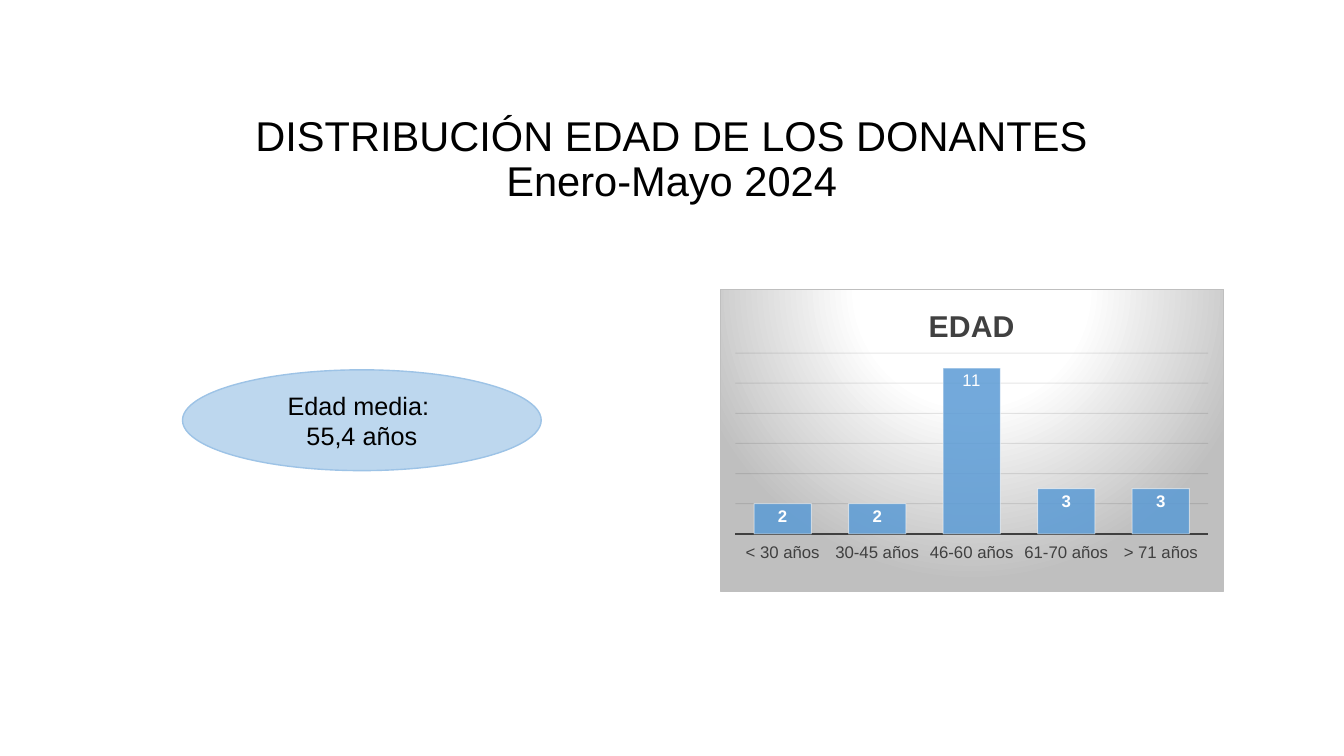
from dataclasses import dataclass

from lxml import etree
from pptx import Presentation
from pptx.chart.data import CategoryChartData
from pptx.dml.color import RGBColor
from pptx.enum.chart import XL_CHART_TYPE, XL_LABEL_POSITION, XL_TICK_LABEL_POSITION, XL_TICK_MARK
from pptx.enum.shapes import MSO_SHAPE
from pptx.enum.text import MSO_ANCHOR, PP_ALIGN
from pptx.oxml import parse_xml
from pptx.oxml.ns import nsdecls, qn
from pptx.util import Cm, Pt

COLUMNS = XL_CHART_TYPE.COLUMN_CLUSTERED
INSIDE_END = XL_LABEL_POSITION.INSIDE_END
LABELS_LOW = XL_TICK_LABEL_POSITION.LOW
NO_TICKS = XL_TICK_MARK.NONE
ELLIPSE = MSO_SHAPE.OVAL
TOP, MIDDLE = MSO_ANCHOR.TOP, MSO_ANCHOR.MIDDLE
CENTER = PP_ALIGN.CENTER


@dataclass(frozen=True)
class Theme:
    font: str = "Arial"
    ink: str = "000000"
    white: str = "FFFFFF"
    chart_ink: str = "404040"
    grid: str = "0D0D0D"
    bar: str = "5B9BD5"
    panel_edge: str = "BFBFBF"
    bubble: str = "BDD7EE"
    bubble_edge: str = "9DC3E6"
    title_size: float = 29.7
    bubble_size: float = 18
    chart_title_size: float = 21.6
    chart_size: float = 12


THEME = Theme()
AGE_COUNTS = {"< 30 años": 2, "30-45 años": 2, "46-60 años": 11, "61-70 años": 3, "> 71 años": 3}
HIGHLIGHTED_GROUP = 2


def rgb(color):
    return RGBColor.from_string(color)


def set_font(font, size, color, bold=False):
    font.name = THEME.font
    font.size = Pt(size)
    font.bold = bold
    font.color.rgb = rgb(color)


def set_line(line, color, width):
    line.color.rgb = rgb(color)
    line.width = Pt(width)


def set_alpha(element, *percents):
    """Give the colours inside element, in order, these opacities."""
    for color, percent in zip(element.iter(qn("a:srgbClr")), percents):
        etree.SubElement(color, qn("a:alpha")).set("val", str(percent * 1000))


def write_text(frame, paragraphs, *, size, color=THEME.ink, bold=False, anchor=None, spacing=None):
    """Fill a frame with centred paragraphs; a vertical tab breaks a line."""
    frame.word_wrap = True
    if anchor is not None:
        frame.vertical_anchor = anchor
    for index, text in enumerate(paragraphs):
        paragraph = frame.add_paragraph() if index else frame.paragraphs[0]
        paragraph.text = text
        paragraph.alignment = CENTER
        paragraph.line_spacing = spacing
        for run in paragraph.runs:
            set_font(run.font, size, color, bold)


def add_heading(slide, left, top, width, height):
    heading = slide.shapes.add_textbox(left, top, width, height)
    heading.text_frame.margin_top = Cm(0.23)
    write_text(heading.text_frame, ["DISTRIBUCIÓN EDAD DE LOS DONANTES\vEnero-Mayo 2024"],
               size=THEME.title_size, anchor=TOP, spacing=0.9)


def add_mean_age(slide, left, top, width, height):
    bubble = slide.shapes.add_shape(ELLIPSE, left, top, width, height)
    bubble.shadow.inherit = False
    bubble.fill.solid()
    bubble.fill.fore_color.rgb = rgb(THEME.bubble)
    set_line(bubble.line, THEME.bubble_edge, 1)
    write_text(bubble.text_frame, ["Edad media: ", "55,4 años"], size=THEME.bubble_size, anchor=MIDDLE)


def style_chart_panel(chart):
    """Add the radial background, its border and the fixed plot area."""
    stops = "".join(f'<a:gs pos="{place * 1000}"><a:srgbClr val="{color}"/></a:gs>'
                    for place, color in ((0, THEME.white), (39, THEME.white), (100, THEME.panel_edge)))
    panel = parse_xml(
        f'<c:spPr {nsdecls("c", "a")}><a:gradFill><a:gsLst>{stops}</a:gsLst><a:path path="circle">'
        '<a:fillToRect l="50000" t="-80000" r="50000" b="180000"/></a:path></a:gradFill>'
        f'<a:ln w="{Pt(0.75)}"><a:solidFill><a:srgbClr val="{THEME.panel_edge}"/></a:solidFill></a:ln></c:spPr>')
    chart_space = chart.element
    chart_space.find(qn("c:chart")).addnext(panel)

    plot_area = chart_space.find(".//" + qn("c:plotArea"))
    for layout in plot_area.findall(qn("c:layout")):
        plot_area.remove(layout)
    places = "".join(f'<c:{name} val="{value}"/>' for name, value in (
        ("layoutTarget", "inner"), ("xMode", "edge"), ("yMode", "edge"),
        ("x", 0.03), ("y", 0.21), ("w", 0.94), ("h", 0.6)))
    plot_area.insert(0, parse_xml(
        f'<c:layout {nsdecls("c")}><c:manualLayout>{places}</c:manualLayout></c:layout>'))


def style_axes(chart):
    ages = chart.category_axis
    ages.major_tick_mark = ages.minor_tick_mark = NO_TICKS
    ages.tick_label_position = LABELS_LOW
    set_font(ages.tick_labels.font, THEME.chart_size, THEME.chart_ink)
    set_line(ages.format.line, THEME.chart_ink, 1.5)

    donors = chart.value_axis
    donors.minimum_scale, donors.maximum_scale, donors.major_unit = 0, 12, 2
    donors.visible = False
    donors.has_major_gridlines = True
    set_line(donors.major_gridlines.format.line, THEME.grid, 0.75)
    set_alpha(chart.element.find(".//" + qn("c:majorGridlines")), 10)


def style_bars(plot):
    plot.gap_width = 65
    plot.vary_by_categories = False
    bars = plot.series[0]
    bars.format.fill.solid()
    bars.format.fill.fore_color.rgb = rgb(THEME.bar)
    set_line(bars.format.line, THEME.white, 0.75)
    set_alpha(bars.format.element if hasattr(bars.format, "element") else bars._element.find(qn("c:spPr")), 85, 50)

    labels = bars.data_labels
    labels.show_value = True
    highlighted = bars.points[HIGHLIGHTED_GROUP].data_label
    for label, bold in ((labels, True), (highlighted, False)):
        label.position = INSIDE_END
        set_font(label.font, THEME.chart_size, THEME.white, bold)


def add_age_chart(slide, left, top, width, height):
    data = CategoryChartData()
    data.categories = list(AGE_COUNTS)
    data.add_series("Series 1", list(AGE_COUNTS.values()))
    chart = slide.shapes.add_chart(COLUMNS, left, top, width, height, data).chart
    set_font(chart.font, THEME.chart_size, THEME.chart_ink)
    chart.has_legend = False
    chart.has_title = True
    write_text(chart.chart_title.text_frame, ["EDAD"], size=THEME.chart_title_size,
               color=THEME.chart_ink, bold=True)
    chart.chart_title.include_in_layout = False
    style_chart_panel(chart)
    style_axes(chart)
    style_bars(chart.plots[0])


def main():
    deck = Presentation()
    deck.slide_width, deck.slide_height = Cm(33.87), Cm(19.05)
    slide = deck.slides.add_slide(deck.slide_layouts[6])
    add_heading(slide, 0, Cm(2.69), deck.slide_width, Cm(2.36))
    add_age_chart(slide, Cm(18.14), Cm(7.29), Cm(12.7), Cm(7.62))
    add_mean_age(slide, Cm(4.6), Cm(9.32), Cm(9.04), Cm(2.54))
    deck.save("out.pptx")


if __name__ == "__main__":
    main()
